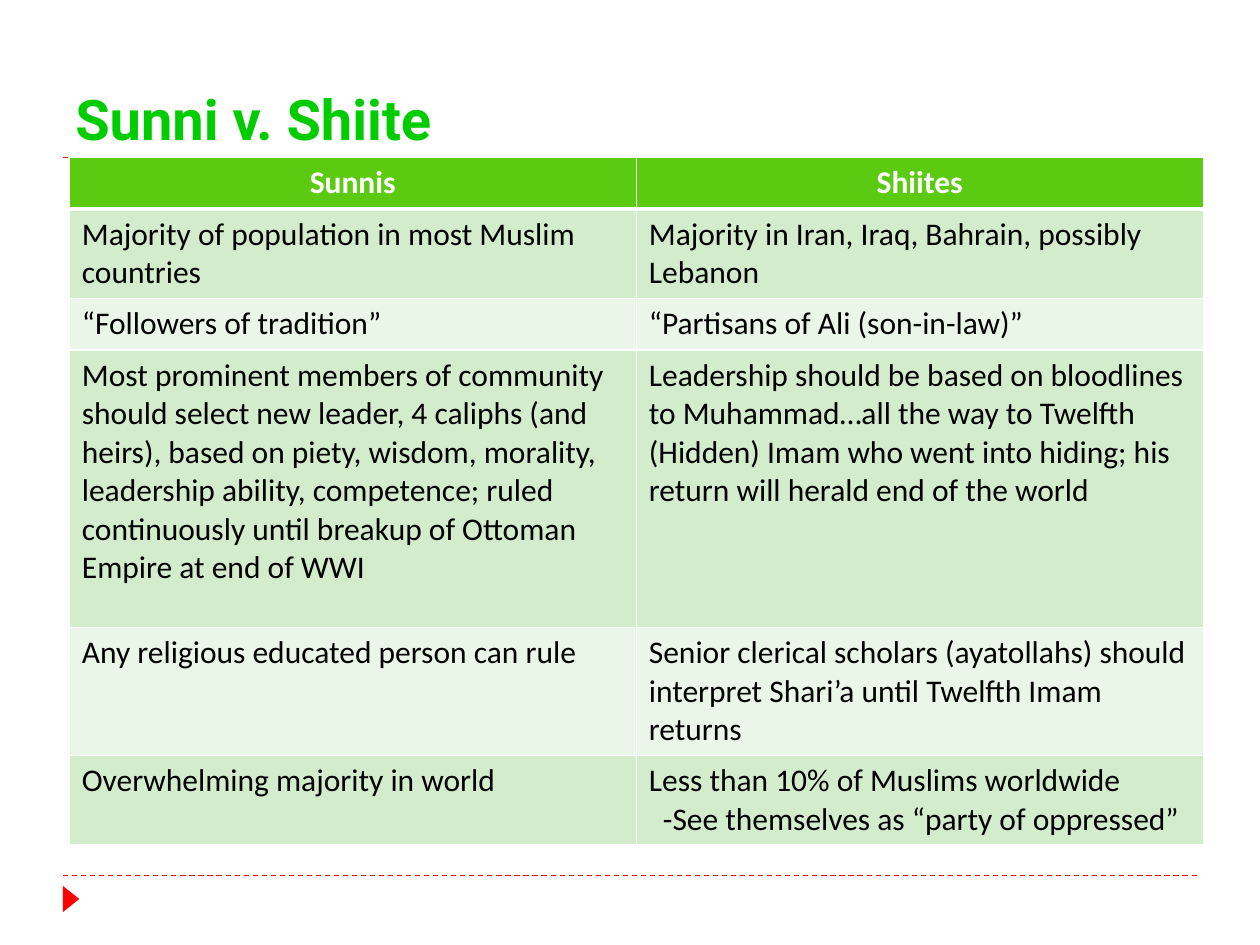
from pptx import Presentation
from pptx.dml.color import RGBColor
from pptx.enum.dml import MSO_LINE
from pptx.enum.shapes import MSO_CONNECTOR, MSO_SHAPE
from pptx.enum.text import MSO_ANCHOR, PP_ALIGN
from pptx.oxml import parse_xml
from pptx.oxml.ns import nsdecls
from pptx.util import Pt

DASH = MSO_LINE.DASH
LINE = MSO_CONNECTOR.STRAIGHT
WEDGE = MSO_SHAPE.ISOSCELES_TRIANGLE
BOTTOM = MSO_ANCHOR.BOTTOM
LEFT, CENTER = PP_ALIGN.LEFT, PP_ALIGN.CENTER

RED = RGBColor(0xFF, 0x00, 0x00)
GREEN = RGBColor(0x00, 0xCC, 0x00)
LIME = RGBColor(0x5B, 0xCA, 0x10)
MINT = RGBColor(0xD2, 0xEC, 0xCC)
PALE = RGBColor(0xEA, 0xF6, 0xE7)
WHITE = RGBColor(0xFF, 0xFF, 0xFF)
BLACK = RGBColor(0x00, 0x00, 0x00)

ROWS = [
    (29.5, ["Sunnis"], ["Shiites"]),
    (51, ["Majority of population in most Muslim countries"],
     ["Majority in Iran, Iraq, Bahrain, possibly Lebanon"]),
    (29.5, ["“Followers of tradition”"], ["“Partisans of Ali (son-in-law)”"]),
    (158.4, ["Most prominent members of community should select new leader, "
             "4 caliphs (and heirs), based on piety, wisdom, morality, "
             "leadership ability, competence; ruled continuously until "
             "breakup of Ottoman Empire at end of WWI"],
     ["Leadership should be based on bloodlines to Muhammad…all the way to "
      "Twelfth (Hidden) Imam who went into hiding; his return will herald "
      "end of the world"]),
    (72, ["Any religious educated person can rule"],
     ["Senior clerical scholars (ayatollahs) should interpret Shari’a until "
      "Twelfth Imam returns"]),
    (51, ["Overwhelming majority in world"],
     ["Less than 10% of Muslims worldwide",
      "-See themselves as “party of oppressed”"]),
]


class Deck:
    """Holds the style and the current slide, and draws each kind of element."""

    def __init__(self, wide, high):
        self.show = Presentation()
        self.show.slide_width, self.show.slide_height = Pt(wide), Pt(high)
        self.slide = self.show.slides.add_slide(self.show.slide_layouts[6])
        self.head, self.body = "Roboto", "Calibri"

    def text(self, para, words, font, size, color, bold=False):
        run = para.add_run()
        run.text = words
        run.font.name, run.font.size = font, Pt(size)
        run.font.bold, run.font.color.rgb = bold, color

    def rule(self, left, right, y):
        line = self.slide.shapes.add_connector(LINE, Pt(left), Pt(y), Pt(right), Pt(y))
        line.line.color.rgb, line.line.width = RED, Pt(0.75)
        line.line.dash_style = DASH
        line._element.spPr.append(parse_xml(f"<a:effectLst {nsdecls('a')}/>"))

    def wedge(self, left, top, wide, high):
        mark = self.slide.shapes.add_shape(WEDGE, Pt(left), Pt(top), Pt(wide), Pt(high))
        mark.rotation = 90
        mark.shadow.inherit = False
        mark.fill.solid()
        mark.fill.fore_color.rgb = RED
        mark.line.fill.background()

    def title(self, words, left, top, wide, high):
        box = self.slide.shapes.add_textbox(Pt(left), Pt(top), Pt(wide), Pt(high))
        frame = box.text_frame
        frame.word_wrap, frame.vertical_anchor = True, BOTTOM
        self.text(frame.paragraphs[0], words, self.head, 32, GREEN, True)

    def edge(self, cell, base):
        props = cell._tc.get_or_add_tcPr()
        widths = {"lnL": 1, "lnR": 1, "lnT": 1, "lnB": base}
        for place, (side, width) in enumerate(widths.items()):
            props.insert(place, parse_xml(
                f'<a:{side} {nsdecls("a")} w="{Pt(width)}"><a:solidFill>'
                f'<a:srgbClr val="{WHITE}"/></a:solidFill></a:{side}>'))

    def cell(self, cell, lines, row):
        top = row == 0
        cell.fill.solid()
        cell.fill.fore_color.rgb = LIME if top else MINT if row % 2 else PALE
        cell.margin_left = cell.margin_right = Pt(7.2)
        cell.margin_top = cell.margin_bottom = Pt(3.6)
        frame = cell.text_frame
        for place, words in enumerate(lines):
            para = frame.add_paragraph() if place else frame.paragraphs[0]
            para.alignment = CENTER if top else LEFT
            if place:
                para._p.get_or_add_pPr().set("marL", str(Pt(8)))
            self.text(para, words, self.body, 18, WHITE if top else BLACK, top)
        self.edge(cell, 3 if top else 1)

    def table(self, rows, left, top, wide):
        cols = len(rows[0]) - 1
        high = sum(row[0] for row in rows)
        grid = self.slide.shapes.add_table(
            len(rows), cols, Pt(left), Pt(top), Pt(wide), Pt(high)).table
        for col in grid.columns:
            col.width = Pt(wide / cols)
        for y, (tall, *cells) in enumerate(rows):
            grid.rows[y].height = Pt(tall)
            for x, lines in enumerate(cells):
                self.cell(grid.cell(y, x), lines, y)


def main():
    deck = Deck(720, 540)
    for y in (500.4, 90):
        deck.rule(36, 684, y)
    deck.wedge(33.1, 509, 15, 9.4)
    deck.table(ROWS, 39.6, 90, 648)
    deck.title("Sunni v. Shiite", 36, 12.2, 648, 77.8)
    deck.show.save("out.pptx")


if __name__ == "__main__":
    main()
